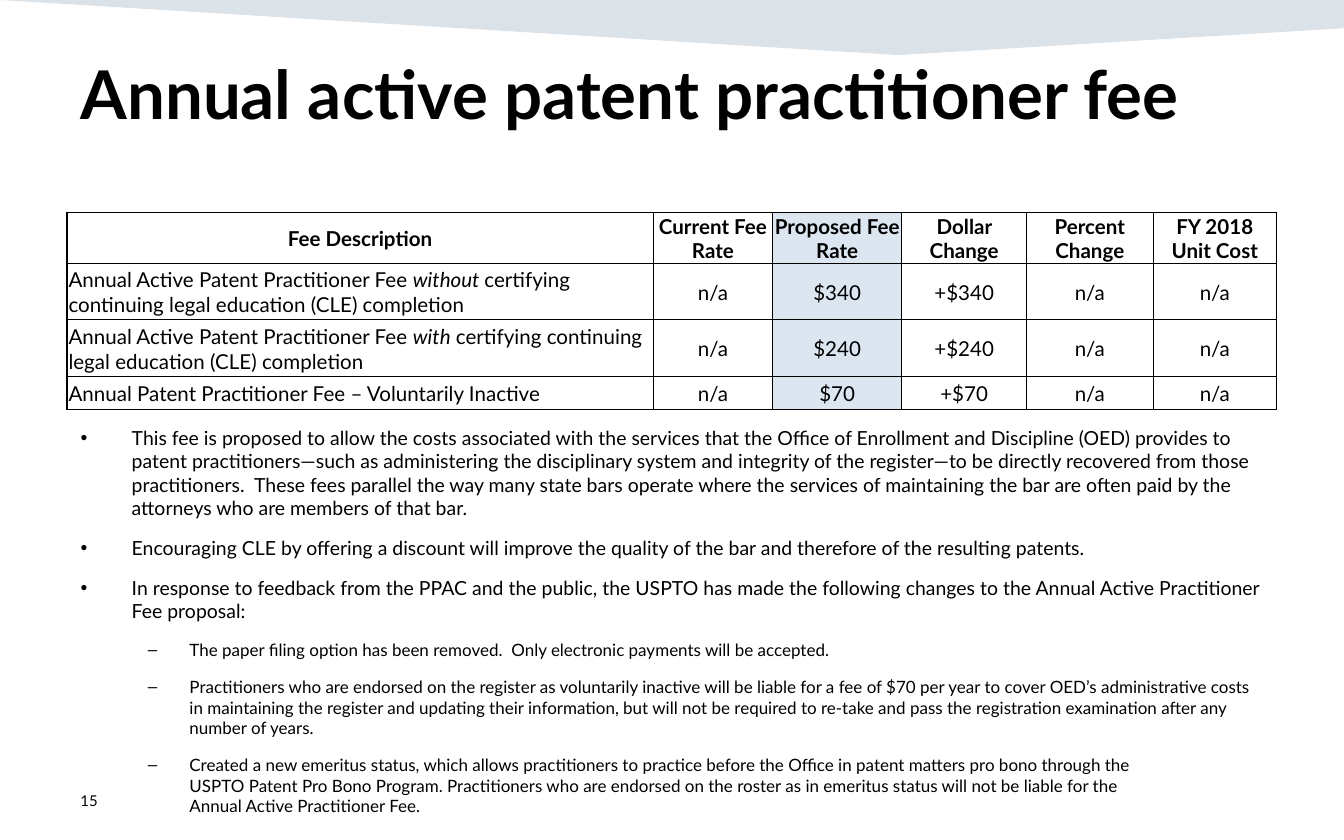
from lxml import etree
from pptx import Presentation
from pptx.dml.color import RGBColor
from pptx.enum.text import MSO_ANCHOR as Anchor, MSO_AUTO_SIZE as AutoSize, PP_ALIGN as Align
from pptx.oxml import parse_xml
from pptx.oxml.ns import nsdecls, qn
from pptx.util import Inches, Pt

FONT = "Lato"
BLACK = RGBColor(0x00, 0x00, 0x00)
BANNER = RGBColor(0x16, 0x44, 0x69)
HIGHLIGHT = RGBColor(0xDC, 0xE6, 0xF1)

BANNER_POINTS = [(10, 0), (10, 0.21), (6.69, 0.41)]
COLUMN_WIDTHS = [4.36, 0.89, 0.96, 0.93, 0.94, 0.92]
ROW_HEIGHTS = [0.38, 0.42, 0.42, 0.25]
PROPOSED_COLUMN = 2

HEADER = ["Fee Description", "Current Fee Rate", "Proposed Fee Rate",
          "Dollar Change", "Percent Change", "FY 2018 Unit Cost"]
# Each description is a list of parts; every second part is italic.
FEES = [
    (["Annual Active Patent Practitioner Fee ", "without ",
      "certifying continuing legal education (CLE) completion"], "$340"),
    (["Annual Active Patent Practitioner Fee ", "with",
      " certifying continuing legal education (CLE) completion"], "$240"),
    (["Annual Patent Practitioner Fee – Voluntarily Inactive"], "$70"),
]

BULLETS = [
    (0, "This fee is proposed to allow the costs associated with the services that the "
        "Office of Enrollment and Discipline (OED) provides to patent practitioners—such as "
        "administering the disciplinary system and integrity of the register—to be directly "
        "recovered from those practitioners.  These fees parallel the way many state bars "
        "operate where the services of maintaining the bar are often paid by the attorneys "
        "who are members of that bar."),
    (0, "Encouraging CLE by offering a discount will improve the quality of the bar and "
        "therefore of the resulting patents."),
    (0, "In response to feedback from the PPAC and the public, the USPTO has made the "
        "following changes to the Annual Active Practitioner Fee proposal:"),
    (1, "The paper filing option has been removed.  Only electronic payments will be accepted."),
    (1, "Practitioners who are endorsed on the register as voluntarily inactive will be liable "
        "for a fee of $70 per year to cover OED’s administrative costs in maintaining the "
        "register and updating their information, but will not be required to re-take and pass "
        "the registration examination after any number of years."),
    (1, "Created a new emeritus status, which allows practitioners to practice before the "
        "Office in patent matters pro bono through the \n"
        "USPTO Patent Pro Bono Program. Practitioners who are endorsed on the roster as in "
        "emeritus status will not be liable for the \n"
        "Annual Active Practitioner Fee."),
]
# Size, left margin and hanging indent of each bullet level.
LEVELS = [(10.4, 0.38, -0.38), (9.1, 0.81, -0.31)]


def write(para, text, size, bold=False, italic=False, align=Align.LEFT):
    """Append text to a paragraph, turning newlines into line breaks."""
    para.alignment = align
    for number, line in enumerate(text.split("\n")):
        if number:
            para.add_line_break()
        span = para.add_run()
        span.text = line
        span.font.name = FONT
        span.font.size = Pt(size)
        span.font.bold = bold
        span.font.italic = italic
        span.font.color.rgb = BLACK


def place(shape, left, top, width, height, anchor=Anchor.TOP):
    """Position a shape and return its text frame, set to wrap."""
    shape.left, shape.top = Inches(left), Inches(top)
    shape.width, shape.height = Inches(width), Inches(height)
    frame = shape.text_frame
    frame.word_wrap = True
    frame.auto_size = AutoSize.NONE
    frame.vertical_anchor = anchor
    return frame


def add_banner(slide):
    builder = slide.shapes.build_freeform(0, 0)
    builder.add_line_segments([(Inches(x), Inches(y)) for x, y in BANNER_POINTS], close=True)
    banner = builder.convert_to_shape()
    banner.shadow.inherit = False
    banner.line.fill.background()
    banner.fill.solid()
    banner.fill.fore_color.rgb = BANNER
    color = banner._element.spPr.find(qn("a:solidFill"))[0]
    etree.SubElement(color, qn("a:alpha"), val="15000")
    slide.shapes._spTree.insert(2, banner._element)


def add_bullets(frame):
    for number, (level, text) in enumerate(BULLETS):
        para = frame.add_paragraph() if number else frame.paragraphs[0]
        size, margin, indent = LEVELS[level]
        para.level = level
        properties = para._p.get_or_add_pPr()
        properties.set("marL", str(Inches(margin)))
        properties.set("indent", str(Inches(indent)))
        para.space_before = Pt(9 if number else 0)
        write(para, text, size)


def set_borders(cell, **widths):
    """Draw the cell's sides; widths are points keyed by L, R, T and B."""
    properties = cell._tc.get_or_add_tcPr()
    for position, side in enumerate("LRTB"):
        properties.insert(position, parse_xml(
            f'<a:ln{side} {nsdecls("a")} w="{Pt(widths[side])}"><a:solidFill>'
            f'<a:srgbClr val="{BLACK}"/></a:solidFill></a:ln{side}>'))


def format_cell(cell, row, column):
    cell.vertical_anchor = Anchor.MIDDLE
    cell.margin_left = cell.margin_top = cell.margin_right = Inches(0.01)
    cell.margin_bottom = 0
    if column == PROPOSED_COLUMN:
        cell.fill.solid()
        cell.fill.fore_color.rgb = HIGHLIGHT
    else:
        cell.fill.background()
    set_borders(cell, L=0.5 if column else 1, R=0.5, T=0.5 if row else 1, B=0.5)


def add_fee_table(slide):
    rows = [[[title] for title in HEADER]]
    for description, fee in FEES:
        rows.append([description, ["n/a"], [fee], ["+" + fee], ["n/a"], ["n/a"]])
    table = slide.shapes.add_table(
        len(rows), len(HEADER), Inches(0.5), Inches(1.58),
        Inches(sum(COLUMN_WIDTHS)), Inches(sum(ROW_HEIGHTS))).table
    table.first_row = table.horz_banding = False
    for column, width in zip(table.columns, COLUMN_WIDTHS):
        column.width = Inches(width)
    for row, height in zip(table.rows, ROW_HEIGHTS):
        row.height = Inches(height)
    for r, parts_of_row in enumerate(rows):
        for c, parts in enumerate(parts_of_row):
            cell = table.cell(r, c)
            format_cell(cell, r, c)
            align = Align.LEFT if r and c == 0 else Align.CENTER
            for number, part in enumerate(parts):
                write(cell.text_frame.paragraphs[0], part, 11, bold=r == 0,
                      italic=number % 2 == 1, align=align)


def main():
    deck = Presentation()
    deck.slide_width, deck.slide_height = Inches(10), Inches(6.25)
    slide = deck.slides.add_slide(deck.slide_layouts[1])
    add_banner(slide)

    title = place(slide.shapes.title, 0.5, 0.34, 9, 1.04)
    write(title.paragraphs[0], "Annual active patent practitioner fee", 36, bold=True)
    add_bullets(place(slide.placeholders[1], 0.5, 3.12, 9, 2.61))

    page_number = place(slide.shapes.add_textbox(0, 0, 0, 0), 0.5, 5.79, 2.25, 0.33, Anchor.MIDDLE)
    write(page_number.paragraphs[0], "15", 8)
    add_fee_table(slide)
    deck.save("out.pptx")


if __name__ == "__main__":
    main()
